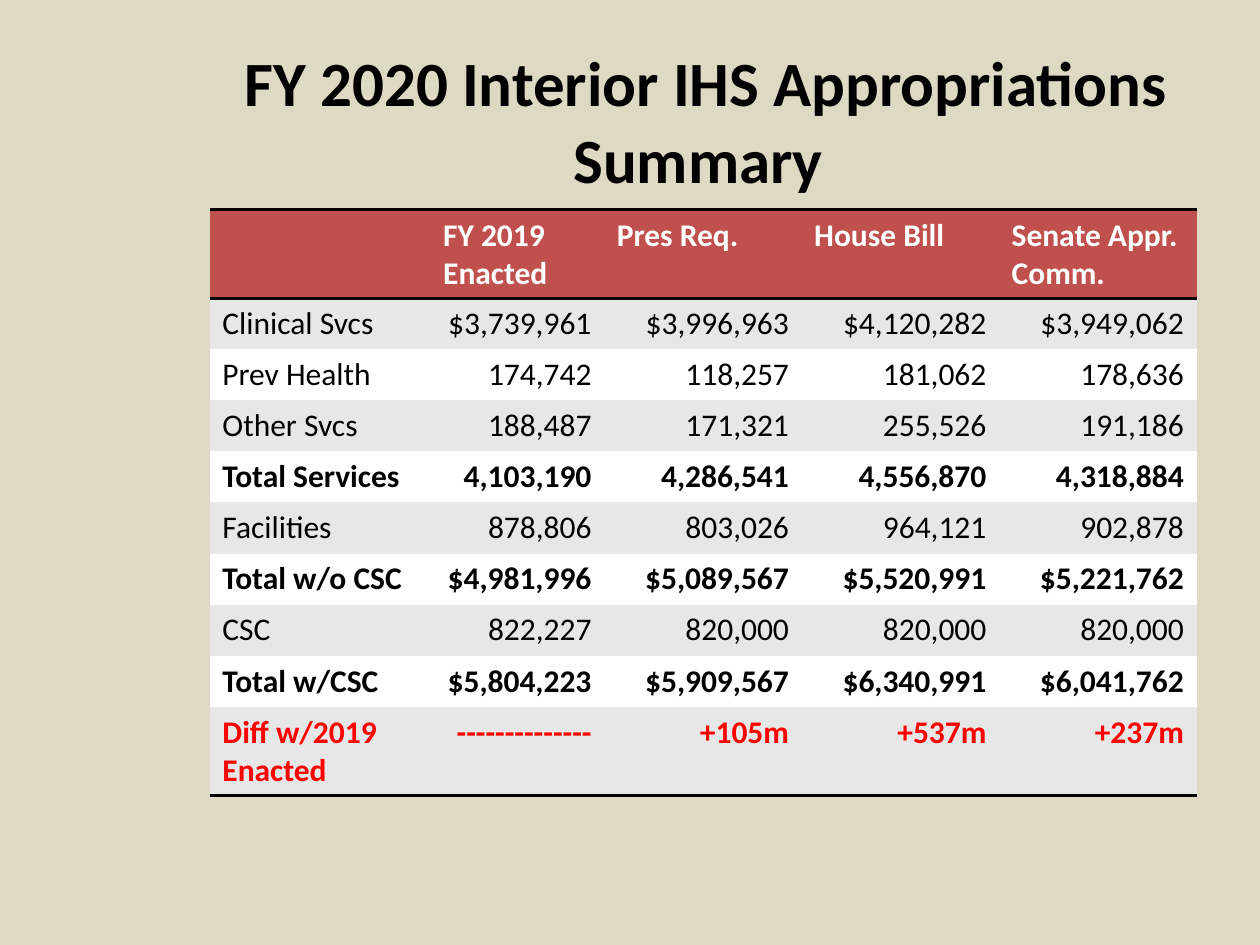
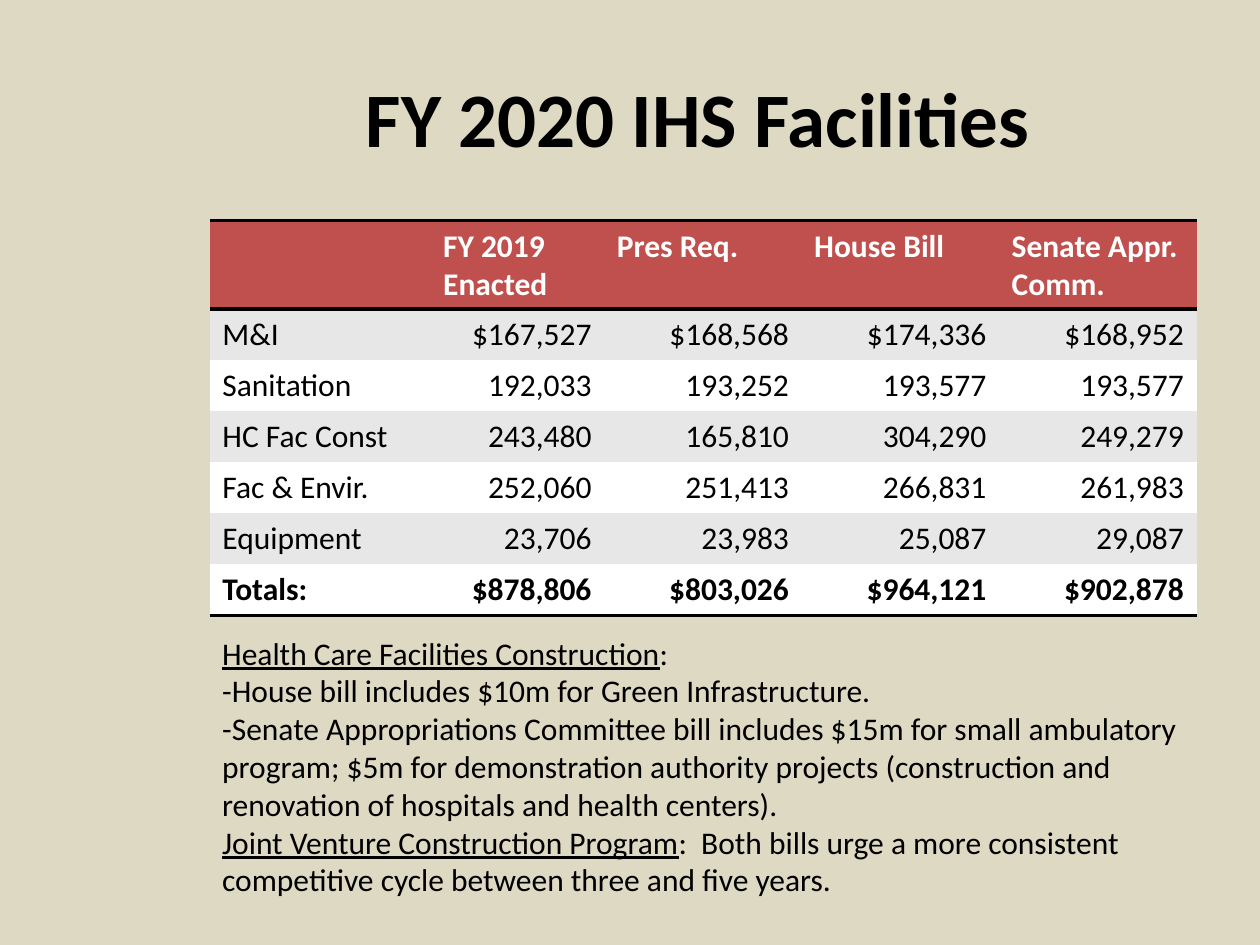
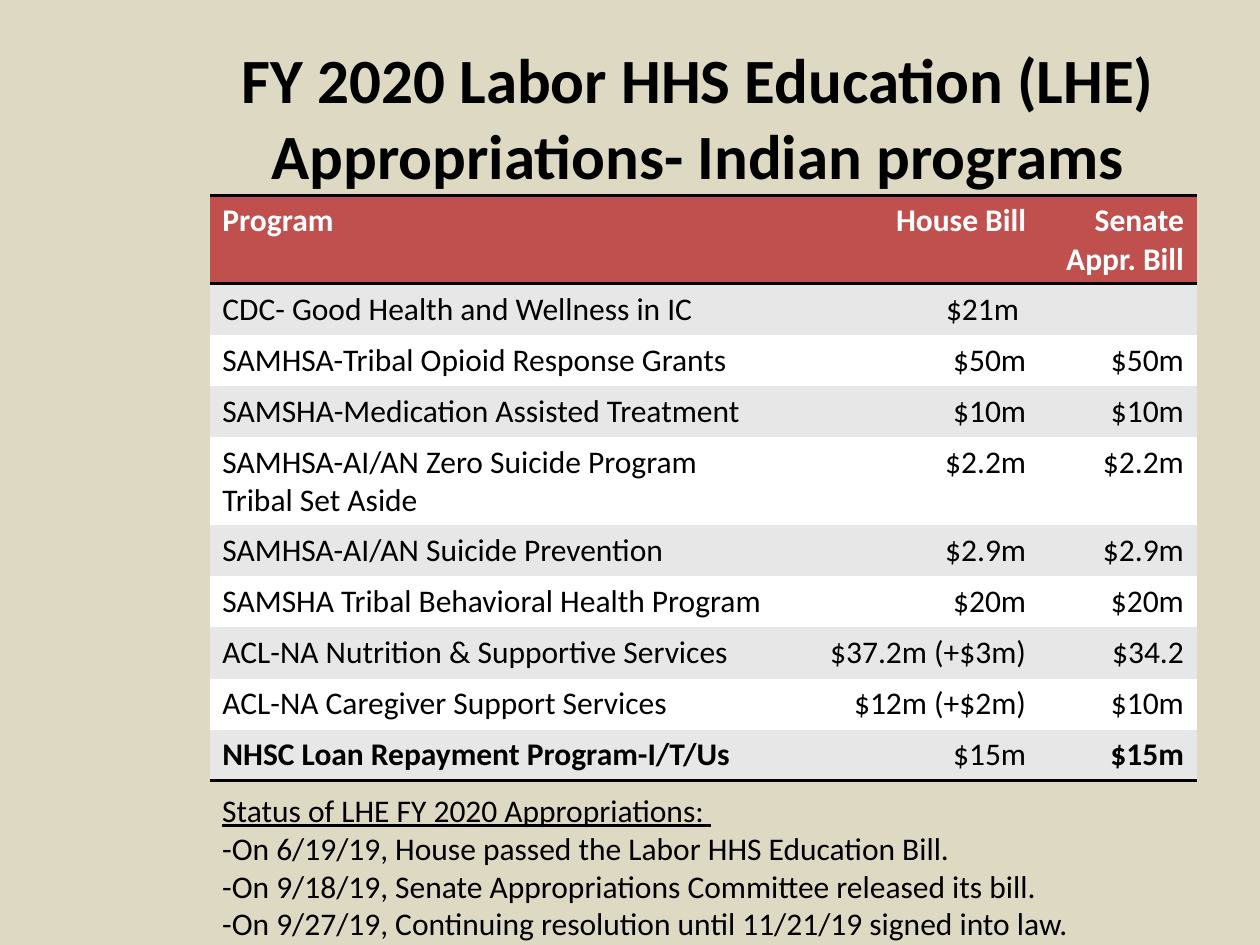
from itertools import product

from lxml.etree import SubElement
from pptx import Presentation
from pptx.dml.color import RGBColor
from pptx.enum.text import MSO_ANCHOR, MSO_AUTO_SIZE, PP_ALIGN
from pptx.oxml.ns import qn
from pptx.util import Cm, Pt

SAND = RGBColor(0xDD, 0xD9, 0xC3)
BRICK = RGBColor(0xC0, 0x50, 0x4D)
BAND = RGBColor(0xE7, 0xE7, 0xE7)
WHITE = RGBColor(0xFF, 0xFF, 0xFF)
BLACK = RGBColor(0x00, 0x00, 0x00)
RED = RGBColor(0xFF, 0x00, 0x00)

FONT = "Calibri"
BODY_SIZE = 18
CONTENT_LEFT = Cm(4.23)
CONTENT_WIDTH = Cm(19.89)
ROW_HEIGHT = Cm(1.03)
BUDGET_WIDTHS = [4.45, 3.5, 3.98, 3.98, 3.98]
PROGRAM_WIDTHS = [11.63, 5.08, 3.18]
BUDGET_HEADER = ["", "FY 2019 Enacted", "Pres Req.", "House Bill", "Senate Appr. Comm."]

SUMMARY_ROWS = [
    BUDGET_HEADER,
    ["Clinical Svcs", "$3,739,961", "$3,996,963", "$4,120,282", "$3,949,062"],
    ["Prev Health", "174,742", "118,257", "181,062", "178,636"],
    ["Other Svcs", "188,487", "171,321", "255,526", "191,186"],
    ["Total Services", "4,103,190", "4,286,541", "4,556,870", "4,318,884"],
    ["Facilities", "878,806", "803,026", "964,121", "902,878"],
    ["Total w/o CSC", "$4,981,996", "$5,089,567", "$5,520,991", "$5,221,762"],
    ["CSC", "822,227", "820,000", "820,000", "820,000"],
    ["Total w/CSC", "$5,804,223", "$5,909,567", "$6,340,991", "$6,041,762"],
    ["Diff w/2019 Enacted", "--------------", "+105m", "+537m", "+237m"],
]

FACILITIES_ROWS = [
    BUDGET_HEADER,
    ["M&I", "$167,527", "$168,568", "$174,336", "$168,952"],
    ["Sanitation", "192,033", "193,252", "193,577", "193,577"],
    ["HC Fac Const", "243,480", "165,810", "304,290", "249,279"],
    ["Fac & Envir.", "252,060", "251,413", "266,831", "261,983"],
    ["Equipment", "23,706", "23,983", "25,087", "29,087"],
    ["Totals:", "$878,806", "$803,026", "$964,121", "$902,878"],
]

PROGRAM_ROWS = [
    ["Program", "House Bill", "Senate Appr. Bill"],
    ["CDC- Good Health and Wellness in IC", "$21m ", ""],
    ["SAMHSA-Tribal Opioid Response Grants", "$50m", "$50m"],
    ["SAMSHA-Medication Assisted Treatment", "$10m", "$10m"],
    ["SAMHSA-AI/AN Zero Suicide Program Tribal Set Aside", "$2.2m", "$2.2m"],
    ["SAMHSA-AI/AN Suicide Prevention", "$2.9m", "$2.9m"],
    ["SAMSHA Tribal Behavioral Health Program", "$20m", "$20m"],
    ["ACL-NA Nutrition & Supportive Services", "$37.2m (+$3m)", "$34.2"],
    ["ACL-NA Caregiver Support Services", "$12m (+$2m)", "$10m"],
    ["NHSC Loan Repayment Program-I/T/Us", "$15m", "$15m"],
]

CONSTRUCTION_NOTES = [
    [("Health Care Facilities Construction", True), (":", False)],
    [("-House bill includes $10m for Green Infrastructure.", False)],
    [("-Senate Appropriations Committee bill includes $15m for small ambulatory "
      "program; $5m for demonstration authority projects (construction and "
      "renovation of hospitals and health centers).", False)],
    [("Joint Venture Construction Program", True),
     (":  Both bills urge a more consistent competitive cycle between three and "
      "five years.", False)],
]

STATUS_NOTES = [
    [("Status of LHE FY 2020 Appropriations: ", True)],
    [("-On 6/19/19, House passed the Labor HHS Education Bill.", False)],
    [("-On 9/18/19, Senate Appropriations Committee released its bill.", False)],
    [("-On 9/27/19, Continuing resolution until 11/21/19 signed into law.", False)],
]


def add_run(paragraph, text, size=BODY_SIZE, color=BLACK, bold=False, underline=False):
    """Append one formatted run to a paragraph."""
    run = paragraph.add_run()
    run.text = text
    run.font.name = FONT
    run.font.size = Pt(size)
    run.font.color.rgb = color
    run.font.bold = bold
    run.font.underline = underline


def add_slide(presentation, title_runs):
    """Add a sand-coloured slide with a centred title given as (text, size) runs."""
    slide = presentation.slides.add_slide(presentation.slide_layouts[6])
    slide.background.fill.solid()
    slide.background.fill.fore_color.rgb = SAND
    title = slide.shapes.add_textbox(Cm(4.02), Cm(0.76), Cm(20.11), Cm(3.18)).text_frame
    title.word_wrap = True
    title.vertical_anchor = MSO_ANCHOR.MIDDLE
    heading = title.paragraphs[0]
    heading.alignment = PP_ALIGN.CENTER
    for text, size in title_runs:
        add_run(heading, text, size, bold=True)
    return slide


def set_rules(cell, top, bottom):
    """Draw black rules above and below a cell where asked and hide other edges."""
    properties = cell._tc.get_or_add_tcPr()
    for edge, visible in (("L", False), ("R", False), ("T", top), ("B", bottom)):
        line = SubElement(properties, qn(f"a:ln{edge}"), w=str(Pt(2)))
        if visible:
            fill = SubElement(line, qn("a:solidFill"))
            SubElement(fill, qn("a:srgbClr"), val=str(BLACK))
        else:
            SubElement(line, qn("a:noFill"))


def add_funding_table(slide, top, widths, rows, bold_cells,
                      header_alignment=PP_ALIGN.LEFT, red_row=None):
    """Add a banded funding table with a brick header and right-aligned amounts."""
    table = slide.shapes.add_table(len(rows), len(widths), CONTENT_LEFT, Cm(top),
                                   CONTENT_WIDTH, ROW_HEIGHT * len(rows)).table
    for column, width in zip(table.columns, widths):
        column.width = Cm(width)
    last_row = len(rows) - 1
    for row, column in product(range(len(rows)), range(len(widths))):
        is_header = row == 0
        cell = table.cell(row, column)
        set_rules(cell, top=row <= 1, bottom=row in (0, last_row))
        cell.fill.solid()
        cell.fill.fore_color.rgb = BRICK if is_header else BAND if row % 2 else WHITE
        paragraph = cell.text_frame.paragraphs[0]
        if column > 0:
            paragraph.alignment = header_alignment if is_header else PP_ALIGN.RIGHT
        if rows[row][column]:
            color = WHITE if is_header else RED if row == red_row else BLACK
            add_run(paragraph, rows[row][column], color=color,
                    bold=is_header or (row, column) in bold_cells)


def add_notes_below(slide, top, height, notes):
    """Add remarks under a table, each a list of (text, underlined) runs."""
    remarks = slide.shapes.add_textbox(CONTENT_LEFT, Cm(top), CONTENT_WIDTH, Cm(height)).text_frame
    remarks.word_wrap = True
    remarks.auto_size = MSO_AUTO_SIZE.SHAPE_TO_FIT_TEXT
    for index, note in enumerate(notes):
        paragraph = remarks.add_paragraph() if index else remarks.paragraphs[0]
        for text, underlined in note:
            add_run(paragraph, text, underline=underlined)


def main():
    """Build the three appropriations slides."""
    presentation = Presentation()
    presentation.slide_width = Cm(25.4)
    presentation.slide_height = Cm(19.05)

    summary = add_slide(presentation, [
        (" ", 39.6), ("FY 2020 Interior IHS Appropriations Summary", 36)])
    add_funding_table(summary, 4.23, BUDGET_WIDTHS, SUMMARY_ROWS,
                      set(product((4, 6, 8, 9), range(5))), red_row=9)

    facilities = add_slide(presentation, [("FY 2020 IHS Facilities", 44)])
    add_funding_table(facilities, 4.45, BUDGET_WIDTHS, FACILITIES_ROWS,
                      set(product((6,), range(5))))
    add_notes_below(facilities, 12.65, 5.63, CONSTRUCTION_NOTES)

    programs = add_slide(presentation, [
        ("FY 2020 Labor HHS Education (LHE) Appropriations- Indian programs", 36)])
    add_funding_table(programs, 3.94, PROGRAM_WIDTHS, PROGRAM_ROWS,
                      {(9, 0), (9, 2)}, header_alignment=PP_ALIGN.RIGHT)
    add_notes_below(programs, 15.82, 3.33, STATUS_NOTES)

    presentation.save("out.pptx")


if __name__ == "__main__":
    main()
